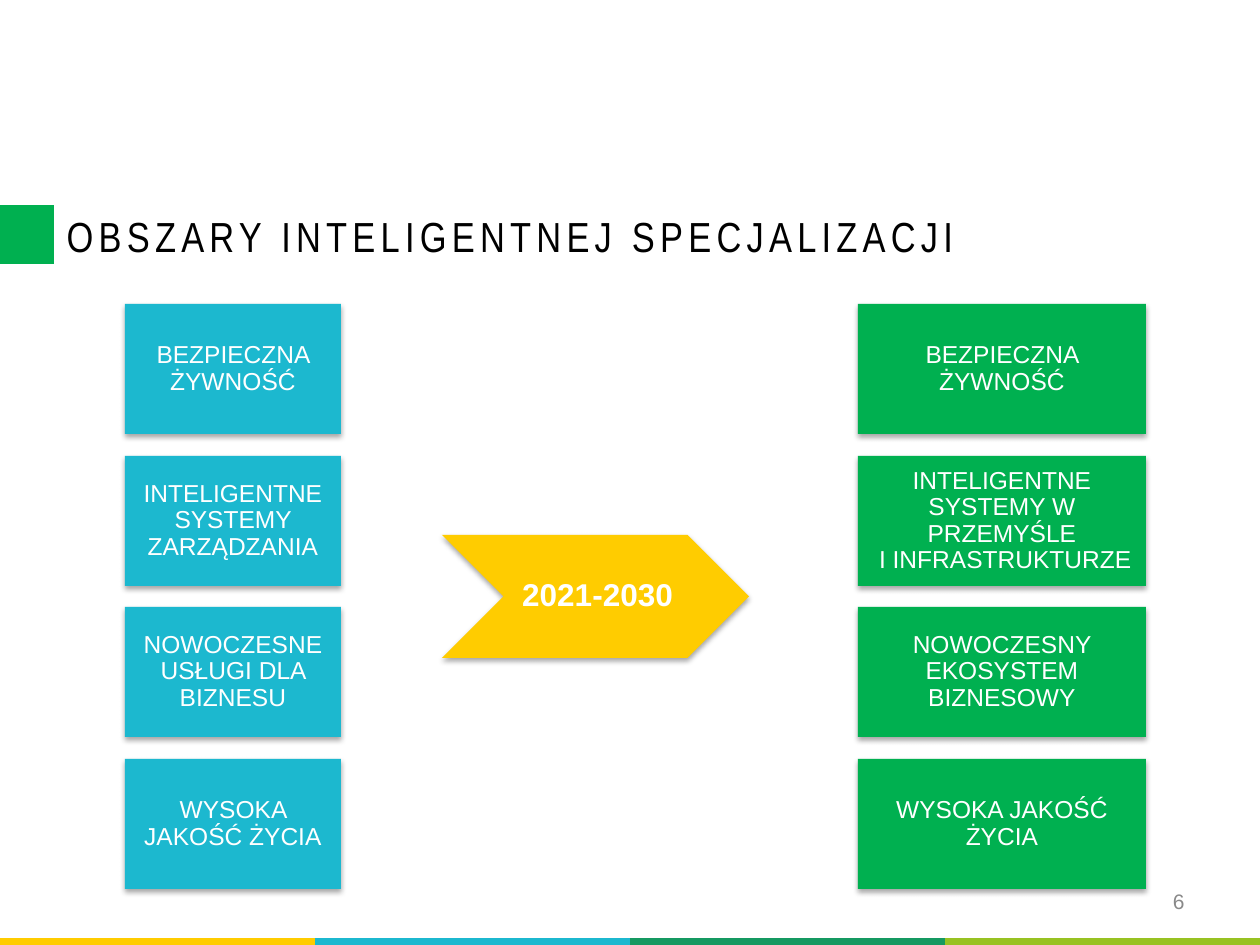
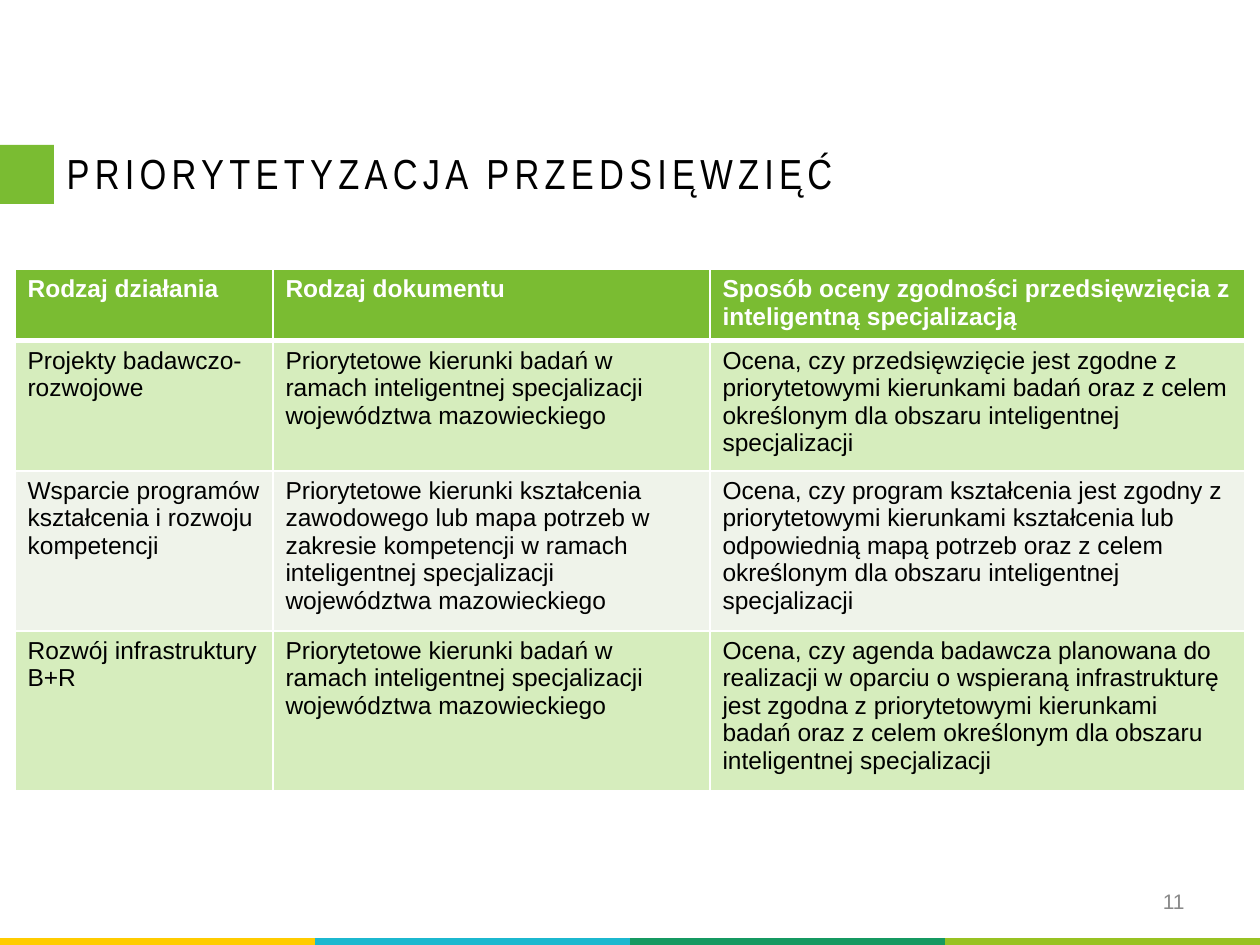
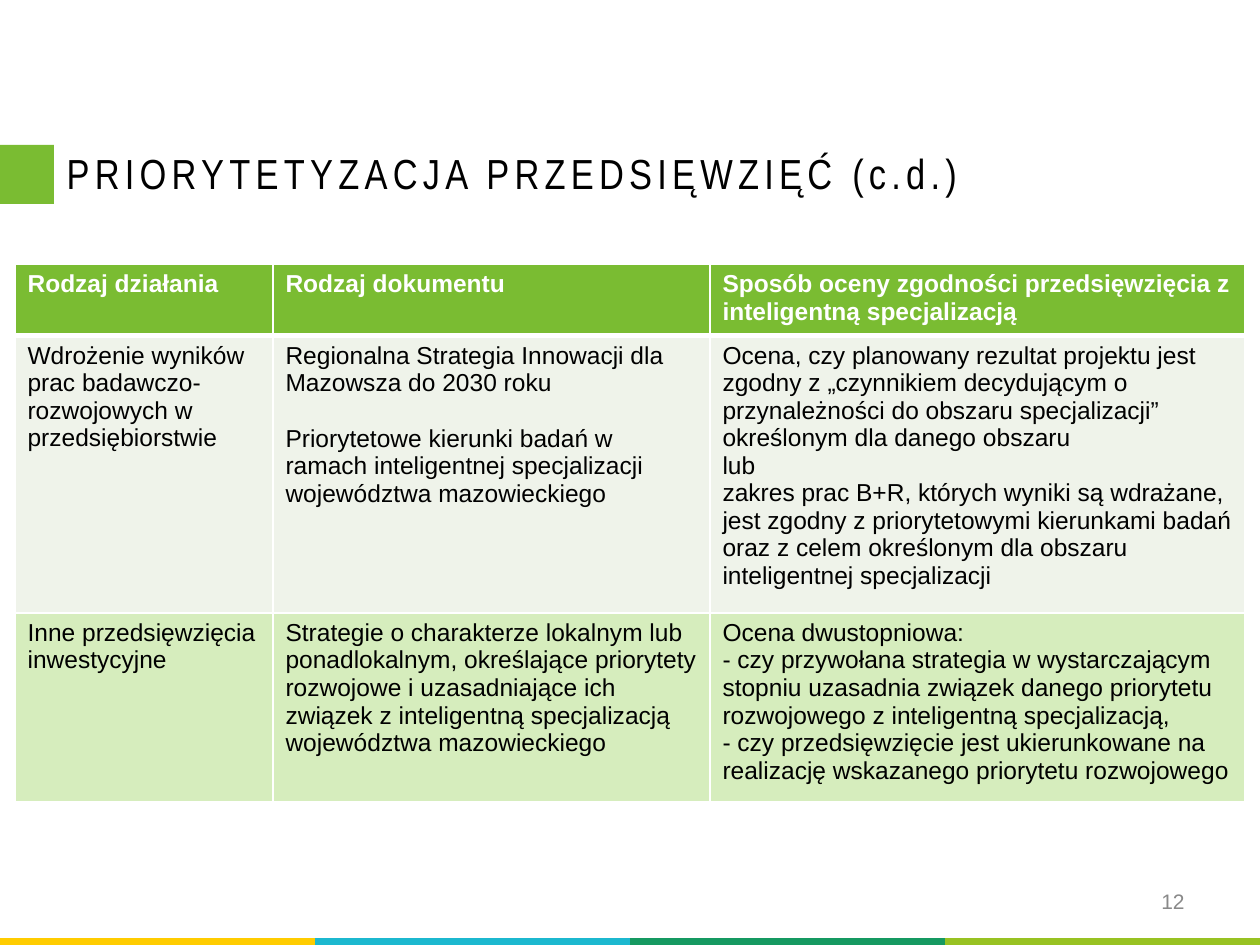
from dataclasses import dataclass

from lxml import etree
from pptx import Presentation
from pptx.dml.color import RGBColor
from pptx.enum.shapes import MSO_SHAPE
from pptx.enum.text import MSO_ANCHOR, MSO_AUTO_SIZE, PP_ALIGN
from pptx.oxml.ns import qn
from pptx.util import Pt

RECT, ARROW = MSO_SHAPE.RECTANGLE, MSO_SHAPE.CHEVRON
TOP, MIDDLE = MSO_ANCHOR.TOP, MSO_ANCHOR.MIDDLE
LEFT, CENTER, RIGHT = PP_ALIGN.LEFT, PP_ALIGN.CENTER, PP_ALIGN.RIGHT
FIXED = MSO_AUTO_SIZE.NONE

WIDTH, HEIGHT = 1260, 945


@dataclass(frozen=True)
class Theme:
    font: str = "Arial"
    head_font: str = "Arial Narrow"
    black: str = "000000"
    white: str = "FFFFFF"
    gray: str = "898989"
    gold: str = "FFCC00"
    blue: str = "1CB8CF"
    green: str = "00B050"
    lime: str = "7ABC32"
    pale: str = "D6EDBD"
    mist: str = "EFF3EA"
    band: tuple = ("FFCC00", "1CB8CF", "159961", "98C222")
    title: int = 24
    label: int = 18
    body: int = 14
    small: int = 12


THEME = Theme()

HEADER = (
    "Rodzaj działania",
    "Rodzaj dokumentu",
    "Sposób oceny zgodności przedsięwzięcia z inteligentną specjalizacją",
)
STUDY = ("Priorytetowe kierunki badań w ramach inteligentnej specjalizacji "
         "województwa mazowieckiego")

OLD_AREAS = (
    "BEZPIECZNA ŻYWNOŚĆ",
    "INTELIGENTNE SYSTEMY ZARZĄDZANIA",
    "NOWOCZESNE USŁUGI DLA BIZNESU",
    "WYSOKA JAKOŚĆ ŻYCIA",
)
NEW_AREAS = (
    "BEZPIECZNA ŻYWNOŚĆ",
    "INTELIGENTNE SYSTEMY W PRZEMYŚLE\v I INFRASTRUKTURZE",
    "NOWOCZESNY EKOSYSTEM BIZNESOWY",
    "WYSOKA JAKOŚĆ ŻYCIA",
)
ACTIONS = (
    HEADER,
    ("Projekty badawczo-rozwojowe",
     STUDY,
     "Ocena, czy przedsięwzięcie jest zgodne z priorytetowymi kierunkami badań "
     "oraz z celem określonym dla obszaru inteligentnej specjalizacji"),
    ("Wsparcie programów kształcenia i rozwoju kompetencji",
     "Priorytetowe kierunki kształcenia zawodowego lub mapa potrzeb w zakresie "
     "kompetencji w ramach inteligentnej specjalizacji województwa mazowieckiego",
     "Ocena, czy program kształcenia jest zgodny z priorytetowymi kierunkami "
     "kształcenia lub odpowiednią mapą potrzeb oraz z celem określonym dla "
     "obszaru inteligentnej specjalizacji"),
    ("Rozwój infrastruktury B+R",
     STUDY,
     "Ocena, czy agenda badawcza planowana do realizacji w oparciu o wspieraną "
     "infrastrukturę jest zgodna z priorytetowymi kierunkami badań oraz z celem "
     "określonym dla obszaru inteligentnej specjalizacji"),
)
MORE_ACTIONS = (
    HEADER,
    ("Wdrożenie wyników prac badawczo-rozwojowych w przedsiębiorstwie",
     "Regionalna Strategia Innowacji dla Mazowsza do 2030 roku\n" + STUDY,
     "Ocena, czy planowany rezultat projektu jest zgodny z „czynnikiem "
     "decydującym o przynależności do obszaru specjalizacji” określonym dla "
     "danego obszaru\n"
     "lub\n"
     "zakres prac B+R, których wyniki są wdrażane, jest zgodny z priorytetowymi "
     "kierunkami badań oraz z celem określonym dla obszaru inteligentnej "
     "specjalizacji"),
    ("Inne przedsięwzięcia inwestycyjne",
     "Strategie o charakterze lokalnym lub ponadlokalnym, określające priorytety "
     "rozwojowe i uzasadniające ich związek z inteligentną specjalizacją "
     "województwa mazowieckiego",
     "Ocena dwustopniowa:\n"
     "- czy przywołana strategia w wystarczającym stopniu uzasadnia związek "
     "danego priorytetu rozwojowego z inteligentną specjalizacją,\n"
     "- czy przedsięwzięcie jest ukierunkowane na realizację wskazanego "
     "priorytetu rozwojowego"),
)


# Basics
def px(count):
    return round(count * 914400 / 126)


def rgb(color):
    return RGBColor.from_string(color)


def paint(item, color):
    item.fill.solid()
    item.fill.fore_color.rgb = rgb(color)


def write(frame, text, size, color, align=LEFT, bold=False, font=THEME.font):
    frame.text = text
    frame.word_wrap = True
    for para in frame.paragraphs:
        para.alignment = align
        para.font.name = font
        para.font.size = Pt(size)
        para.font.bold = bold
        para.font.color.rgb = rgb(color)


def add_block(slide, kind, box, color):
    shape = slide.shapes.add_shape(kind, *map(px, box))
    shape.shadow.inherit = False
    paint(shape, color)
    shape.line.fill.background()
    return shape


# Tables
def add_edges(cell, side=0, above=0, below=0):
    props = cell._tc.get_or_add_tcPr()
    for name, points in (("L", side), ("R", side), ("T", above), ("B", below)):
        line = etree.SubElement(props, qn("a:ln" + name), w=str(Pt(points)))
        if points:
            fill = etree.SubElement(line, qn("a:solidFill"))
            etree.SubElement(fill, qn("a:srgbClr"), val=THEME.white)
        else:
            etree.SubElement(line, qn("a:noFill"))


def add_table(slide, left, top, widths, heights):
    box = (left, top, sum(widths), sum(heights))
    table = slide.shapes.add_table(len(heights), len(widths), *map(px, box)).table
    table.horz_banding = False
    for col, width in zip(table.columns, widths):
        col.width = px(width)
    for row, height in zip(table.rows, heights):
        row.height = px(height)
    return table


def add_band(slide):
    count = len(THEME.band)
    table = add_table(slide, 0, 938, [WIDTH // count] * count, [50])
    table.first_row = False
    for cell, tint in zip(table.iter_cells(), THEME.band):
        add_edges(cell)
        paint(cell, tint)


def add_grid(slide, top, heights, rows, tints):
    table = add_table(slide, 15, top, (258, 437, 535), heights)
    for r, texts in enumerate(rows):
        head = r == 0
        tint = THEME.lime if head else tints[(r - 1) % 2]
        for c, text in enumerate(texts):
            cell = table.cell(r, c)
            add_edges(cell, 1, 3 if r == 1 else 1, 3 if head else 1)
            paint(cell, tint)
            write(cell.text_frame, text, THEME.body,
                  THEME.white if head else THEME.black, bold=head)
    return table


# Shared frame: title with its marker, page number, bottom band
def add_page(deck, title, number, color, mark_top, title_top):
    slide = deck.slides.add_slide(deck.slide_layouts[5])
    add_band(slide)
    add_block(slide, RECT, (0, mark_top, 54, 59), color)

    head = slide.shapes.title
    head.left, head.top, head.width, head.height = map(px, (54, title_top, 976, 63))
    frame = head.text_frame
    frame.auto_size = FIXED
    frame.vertical_anchor = TOP
    write(frame, title, THEME.title, THEME.black, font=THEME.head_font)
    for run in frame.paragraphs[0].runs:
        run.font._element.set("spc", "300")

    page = slide.shapes.add_textbox(*map(px, (903, 876, 294, 50))).text_frame
    page.vertical_anchor = MIDDLE
    write(page, str(number), THEME.small, THEME.gray, RIGHT)
    return slide


# Shadowed shapes with centred text
def add_shadow(shape):
    effects = shape._element.spPr.find(qn("a:effectLst"))
    outer = etree.SubElement(effects, qn("a:outerShdw"), blurRad="40000",
                             dist="23000", dir="5400000", rotWithShape="0")
    tint = etree.SubElement(outer, qn("a:srgbClr"), val=THEME.black)
    etree.SubElement(tint, qn("a:alpha"), val="35000")


def add_card(slide, kind, box, color, text, size, pads, bold=False):
    card = add_block(slide, kind, box, color)
    add_shadow(card)
    frame = card.text_frame
    frame.vertical_anchor = MIDDLE
    (frame.margin_left, frame.margin_top,
     frame.margin_right, frame.margin_bottom) = map(px, pads)
    write(frame, text, size, THEME.white, CENTER, bold)
    frame.paragraphs[0].line_spacing = 0.9


def add_stack(slide, left, width, color, areas):
    top, span, height = 304, 585, 130
    step = (span - height) / (len(areas) - 1)
    for i, area in enumerate(areas):
        box = (left, round(top + i * step), width, height)
        add_card(slide, RECT, box, color, area, THEME.body, (8, 8, 8, 8))


def main():
    deck = Presentation()
    deck.slide_width, deck.slide_height = px(WIDTH), px(HEIGHT)

    # Areas before and after
    slide = add_page(deck, "OBSZARY INTELIGENTNEJ SPECJALIZACJI", 6,
                     THEME.green, 205, 204)
    add_stack(slide, 125, 216, THEME.blue, OLD_AREAS)
    add_stack(slide, 858, 288, THEME.green, NEW_AREAS)
    add_card(slide, ARROW, (442, 535, 307, 123), THEME.gold, "2021-2030",
             THEME.label, (4, 1, 0, 1), bold=True)

    # Priorities
    title = "PRIORYTETYZACJA PRZEDSIĘWZIĘĆ"
    slide = add_page(deck, title, 11, THEME.lime, 145, 141)
    add_grid(slide, 269, (70, 130, 160, 160), ACTIONS, (THEME.pale, THEME.mist))

    # Priorities, continued
    slide = add_page(deck, title + " (c.d.)", 12, THEME.lime, 145, 141)
    table = add_grid(slide, 264, (70, 277, 188), MORE_ACTIONS,
                     (THEME.mist, THEME.pale))
    table.cell(1, 1).text_frame.paragraphs[1].space_before = Pt(16)

    deck.save("out.pptx")


if __name__ == "__main__":
    main()
